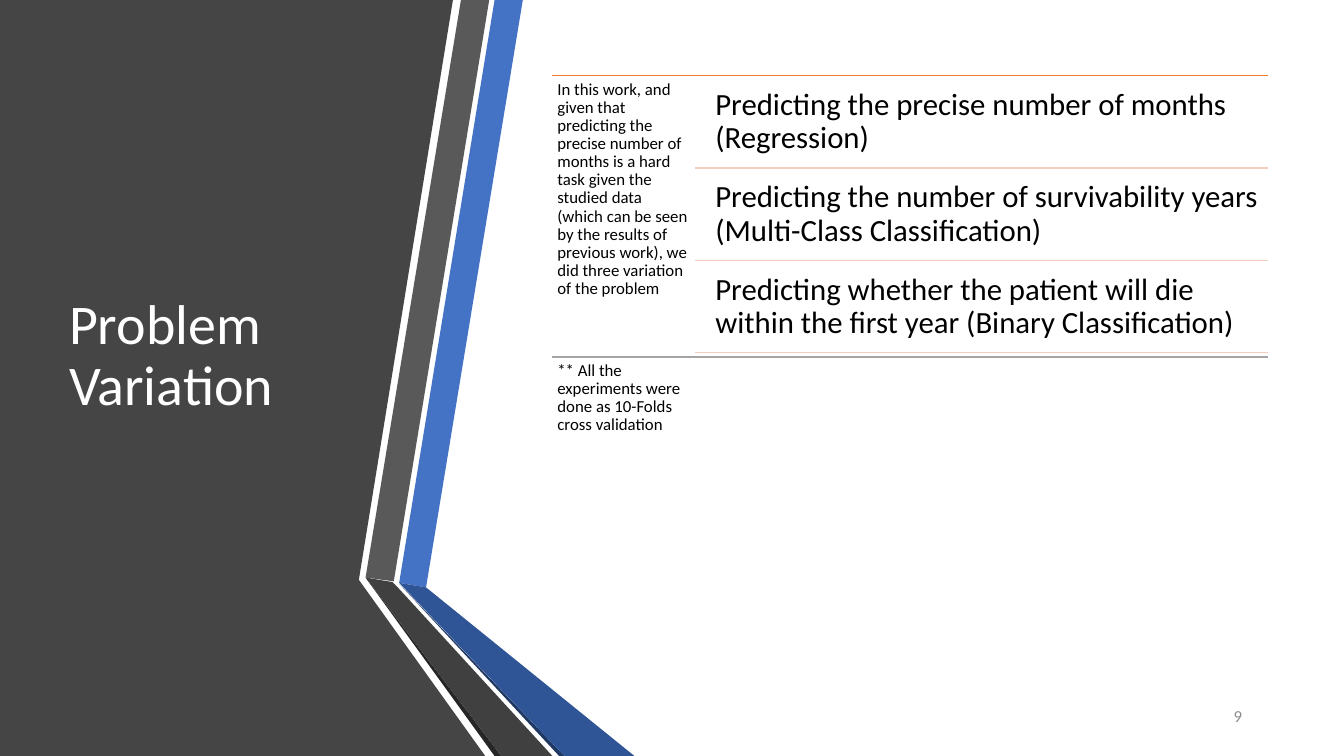
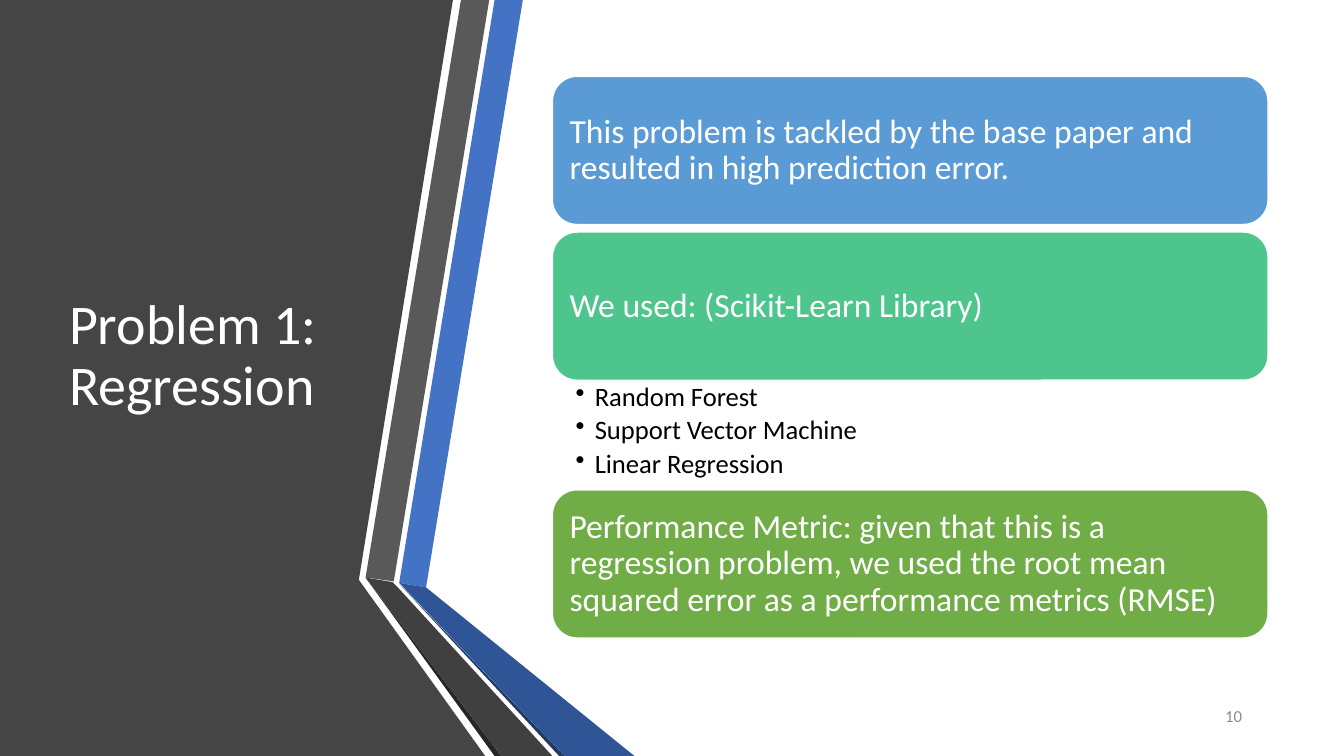
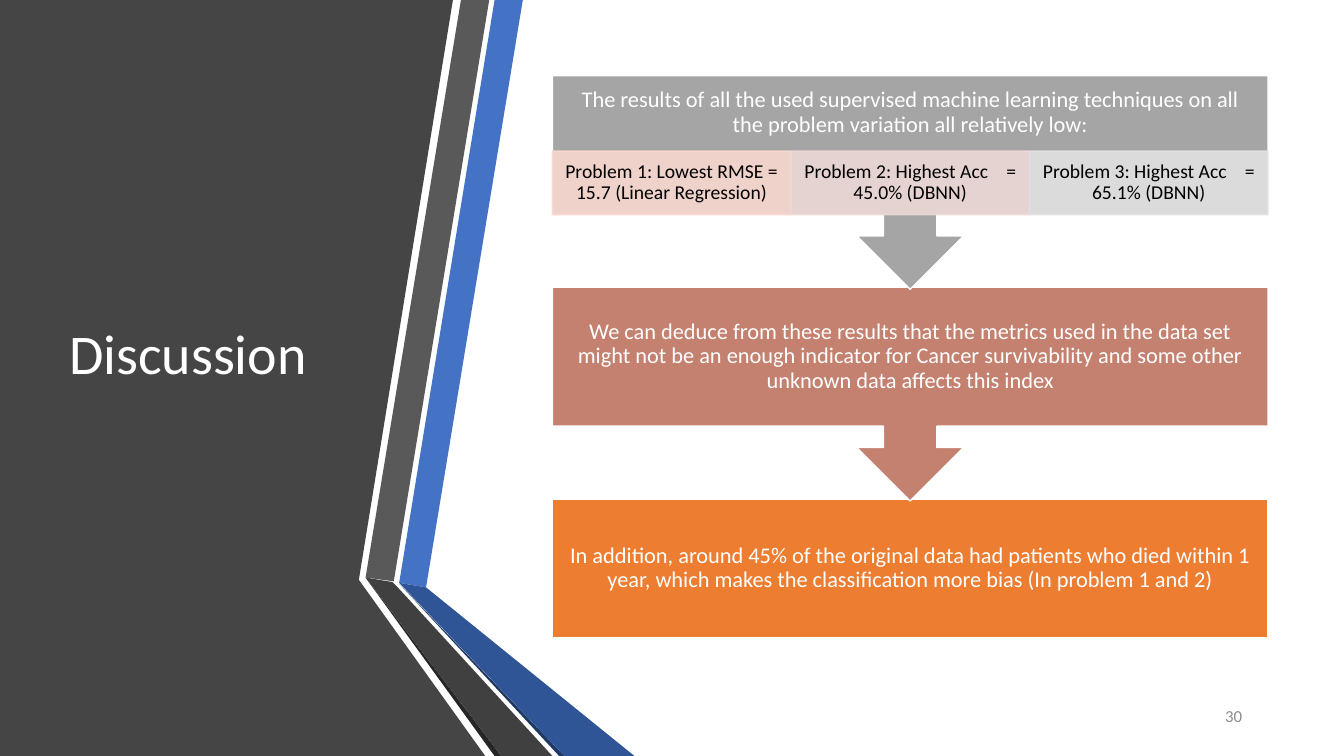
from lxml.etree import SubElement
from pptx import Presentation
from pptx.dml.color import RGBColor
from pptx.enum.shapes import MSO_CONNECTOR, MSO_SHAPE
from pptx.enum.text import MSO_ANCHOR, PP_ALIGN
from pptx.oxml.ns import qn
from pptx.util import Inches, Pt

# Grid: 100 columns by 100 rows
WIDTH, HEIGHT = Inches(13.33), Inches(7.5)
COLUMN, ROW = WIDTH / 100, HEIGHT / 100
LEFT, TOP, SPAN, DEPTH = 41.1, 10, 53.25, 74.4

# Colours
WHITE = RGBColor(0xFF, 0xFF, 0xFF)
BLACK = RGBColor(0x00, 0x00, 0x00)
CHARCOAL = RGBColor(0x45, 0x45, 0x45)
MID_GREY = RGBColor(0x59, 0x59, 0x59)
DARK_GREY = RGBColor(0x40, 0x40, 0x40)
NEAR_BLACK = RGBColor(0x26, 0x26, 0x26)
BLUE = RGBColor(0x44, 0x72, 0xC4)
DEEP_BLUE = RGBColor(0x2F, 0x55, 0x97)
NAVY = RGBColor(0x20, 0x38, 0x64)
SKY = RGBColor(0x5B, 0x9B, 0xD5)
MINT = RGBColor(0x4D, 0xC5, 0x8D)
GREEN = RGBColor(0x70, 0xAD, 0x47)
ORANGE = RGBColor(0xED, 0x7D, 0x31)
SILVER = RGBColor(0xA5, 0xA5, 0xA5)
CLAY = RGBColor(0xC4, 0x81, 0x70)
PEACH = RGBColor(0xF6, 0xCC, 0xBE)
PALE_PEACH = RGBColor(0xF8, 0xD7, 0xCE)
PALE_ROSE = RGBColor(0xED, 0xD9, 0xD7)
PALE_GREY = RGBColor(0xE1, 0xE1, 0xE1)
NUMBER_GREY = RGBColor(0x8C, 0x8C, 0x8C)

# Text styles: size, colour, alignment, anchor, line spacing, margins (left, top, right, bottom)
MIDDLE, UPPER = MSO_ANCHOR.MIDDLE, MSO_ANCHOR.TOP
TITLE = (40, WHITE, PP_ALIGN.LEFT, MIDDLE, 0.9, (0.1, 0.05, 0.1, 0.05))
NUMBER = (12, NUMBER_GREY, PP_ALIGN.RIGHT, MIDDLE, 1.0, (0.1, 0.05, 0.1, 0.05))
SIDE_NOTE = (12, BLACK, PP_ALIGN.LEFT, UPPER, 0.9, (0.05, 0.05, 0.05, 0.05))
VARIATION = (22, BLACK, PP_ALIGN.LEFT, UPPER, 0.9, (0.09, 0.09, 0.09, 0.09))
PANEL = (24, WHITE, PP_ALIGN.LEFT, MIDDLE, 0.9, (0.1, 0.1, 0.1, 0.1))
BULLET = (19, BLACK, PP_ALIGN.LEFT, UPPER, 0.9, (0.23, 0.03, 0.19, 0.03))
STEP = (16, WHITE, PP_ALIGN.CENTER, MIDDLE, 0.9, (0.12, 0.12, 0.12, 0.12))
FIRST_STEP = STEP[:5] + ((0.12, 0.12, 0.12, 0.76),)
METRIC = (14, BLACK, PP_ALIGN.CENTER, MIDDLE, 0.9, (0.11, 0.02, 0.11, 0.02))

# Ribbon outlines in columns and rows
RIBBON = [
    (CHARCOAL, [(0, 0), (33.7, 0), (26.7, 76.7), (36.1, 100), (0, 100)]),
    (BLUE, [(29.7, 77.1), (31.7, 77.7), (38.9, 0), (36.8, 0)]),
    (MID_GREY, [(36.4, 0), (34.3, 0), (27.2, 76.4), (29.3, 76.9)]),
    (NEAR_BLACK, [(27.2, 76.4), (36.8, 100), (37.3, 100)]),
    (NAVY, [(29.7, 77.2), (41.6, 100), (42, 100)]),
    (DEEP_BLUE, [(29.7, 77.1), (42, 100), (47.2, 100), (31.7, 77.7)]),
    (DARK_GREY, [(41.1, 100), (29.6, 77.7), (29.2, 77), (27.2, 76.4), (37.3, 100)]),
]


def add_box(page, cell, lines, style, kind=None, fill=None, edge=WHITE):
    """Place text in a grid cell, in a preset shape if kind is given; | marks a wide gap."""
    left, top, width, height = cell
    place = [round(n) for n in (left * COLUMN, top * ROW, width * COLUMN, height * ROW)]
    if kind is None:
        box = page.shapes.add_textbox(*place)
    else:
        box = page.shapes.add_shape(kind, *place)
        box.shadow.inherit = False
        box.fill.solid()
        box.fill.fore_color.rgb = fill
        box.line.color.rgb = edge
        box.line.width = Pt(1)
    size, colour, align, anchor, spacing, margins = style
    frame = box.text_frame
    layout = {"word_wrap": True, "vertical_anchor": anchor}
    for side, margin in zip(("left", "top", "right", "bottom"), margins):
        layout["margin_" + side] = Inches(margin)
    for name, value in layout.items():
        setattr(frame, name, value)
    for index, line in enumerate(lines):
        para = frame.paragraphs[0] if index == 0 else frame.add_paragraph()
        para.alignment, para.line_spacing = align, spacing
        for piece in line.replace("|", "| |").split("|"):
            span = para.add_run()
            span.text = piece
            for name, value in {"name": "Calibri", "size": Pt(size)}.items():
                setattr(span.font, name, value)
            span.font.color.rgb = colour
            if piece == " ":
                span._r.get_or_add_rPr().set("spc", "950")
    return box


deck = Presentation()
deck.slide_width, deck.slide_height = WIDTH, HEIGHT

# Shared ribbon, title and page number
pages = []
for title, number in [("Problem Variation", "9"), ("Problem 1: Regression", "10"), ("Discussion", "30")]:
    page = deck.slides.add_slide(deck.slide_layouts[6])
    for colour, outline in RIBBON:
        points = [(round(x * COLUMN), round(y * ROW)) for x, y in outline]
        builder = page.shapes.build_freeform(*points[0])
        builder.add_line_segments(points[1:], close=True)
        band = builder.convert_to_shape()
        band.shadow.inherit = False
        band.fill.solid()
        band.fill.fore_color.rgb = colour
        band.line.fill.background()
    add_box(page, (4.4, TOP, 22.8, DEPTH), [title], TITLE)
    add_box(page, (84.25, 92, 8.9, 5.3), [number], NUMBER)
    pages.append(page)
variation_page, regression_page, discussion_page = pages

# Problem Variation: side notes, variations and rules
notes = [
    "In this work, and given that predicting the precise number of months is a hard task given the "
    "studied data (which can be seen by the results of previous work), we did three variation of the problem",
    "** All the experiments were done as 10-Folds cross validation",
]
variations = [
    "Predicting the precise number of months (Regression)",
    "Predicting the number of survivability years (Multi-Class Classification)",
    "Predicting whether the patient will die within the first year (Binary Classification)",
]
side, pitch = SPAN / 5, 12.22
rules = [(LEFT, TOP, ORANGE)]
for index, text in enumerate(notes):
    add_box(variation_page, (LEFT, TOP + index * DEPTH / 2, side, DEPTH / 2), [text], SIDE_NOTE)
for index, text in enumerate(variations):
    cell = (LEFT + side + 0.8, TOP + 0.55 + index * pitch, SPAN - side - 0.8, 11.6)
    add_box(variation_page, cell, [text], VARIATION)
    rules.append((LEFT + side, TOP + (index + 1) * pitch, PEACH))
rules.append((LEFT, TOP + DEPTH / 2, SILVER))
for left, top, colour in rules:
    ends = [round(n) for n in (left * COLUMN, top * ROW, (LEFT + SPAN) * COLUMN, top * ROW)]
    rule = variation_page.shapes.add_connector(MSO_CONNECTOR.STRAIGHT, *ends)
    rule.line.color.rgb = colour
    rule.line.width = Pt(1)
    SubElement(rule._element.spPr, qn("a:effectLst"))

# Problem 1: stacked panels, with the methods below the second
panel_height, gap, methods_height = 19.6, 1, 14.5
panels = [
    (TOP + 0.1, SKY, "This problem is tackled by the base paper and resulted in high prediction error."),
    (TOP + 0.1 + panel_height + gap, MINT, "We used: (Scikit-Learn Library)"),
    (TOP + DEPTH - panel_height, GREEN, "Performance Metric: given that this is a regression problem, "
     "we used the root mean squared error as a performance metrics (RMSE)"),
]
for top, colour, text in panels:
    cell = (LEFT, top, SPAN, panel_height)
    add_box(regression_page, cell, [text], PANEL, MSO_SHAPE.ROUNDED_RECTANGLE, colour)
methods = add_box(regression_page, (LEFT, panels[2][0] - methods_height, SPAN, methods_height),
                  ["Random Forest", "Support Vector Machine", "Linear Regression"], BULLET)
for para in methods.text_frame.paragraphs:
    para.space_after = Pt(3.5)
    properties = para._p.get_or_add_pPr()
    for name, value in {"marL": 0.19, "indent": -0.19}.items():
        properties.set(name, str(Inches(value)))
    SubElement(properties, qn("a:buChar")).set("char", "•")

# Discussion: steps from the bottom up, so each arrow tip lies over the next step
body, callout, stride = 18.4, 28.27, 28
steps = [
    (2, body, MSO_SHAPE.RECTANGLE, ORANGE, STEP,
     "In addition, around 45% of the original data had patients who died within 1 year, "
     "which makes the classification more bias (In problem 1 and 2)"),
    (1, callout, MSO_SHAPE.DOWN_ARROW_CALLOUT, CLAY, STEP,
     "We can deduce from these results that the metrics used in the data set might not be an enough "
     "indicator for Cancer survivability and some other unknown data affects this index"),
    (0, callout, MSO_SHAPE.DOWN_ARROW_CALLOUT, SILVER, FIRST_STEP,
     "The results of all the used supervised machine learning techniques on all "
     "the problem variation all relatively low:"),
]
for place, height, kind, colour, style, text in steps:
    add_box(discussion_page, (LEFT, TOP + place * stride, SPAN, height), [text], style, kind, colour)

# Metrics on the first step, slightly see-through
metrics = [
    (PALE_PEACH, "Problem 1: Lowest RMSE = 15.7 (Linear Regression)"),
    (PALE_ROSE, "Problem 2: Highest Acc|= 45.0% (DBNN)"),
    (PALE_GREY, "Problem 3: Highest Acc|= 65.1% (DBNN)"),
]
for index, (colour, text) in enumerate(metrics):
    cell = (LEFT + index * SPAN / 3, 2 * TOP, SPAN / 3, 8.4)
    box = add_box(discussion_page, cell, [text], METRIC, MSO_SHAPE.RECTANGLE, colour, colour)
    for tint in box._element.spPr.iter(qn("a:srgbClr")):
        SubElement(tint, qn("a:alpha")).set("val", "90000")

deck.save("out.pptx")
